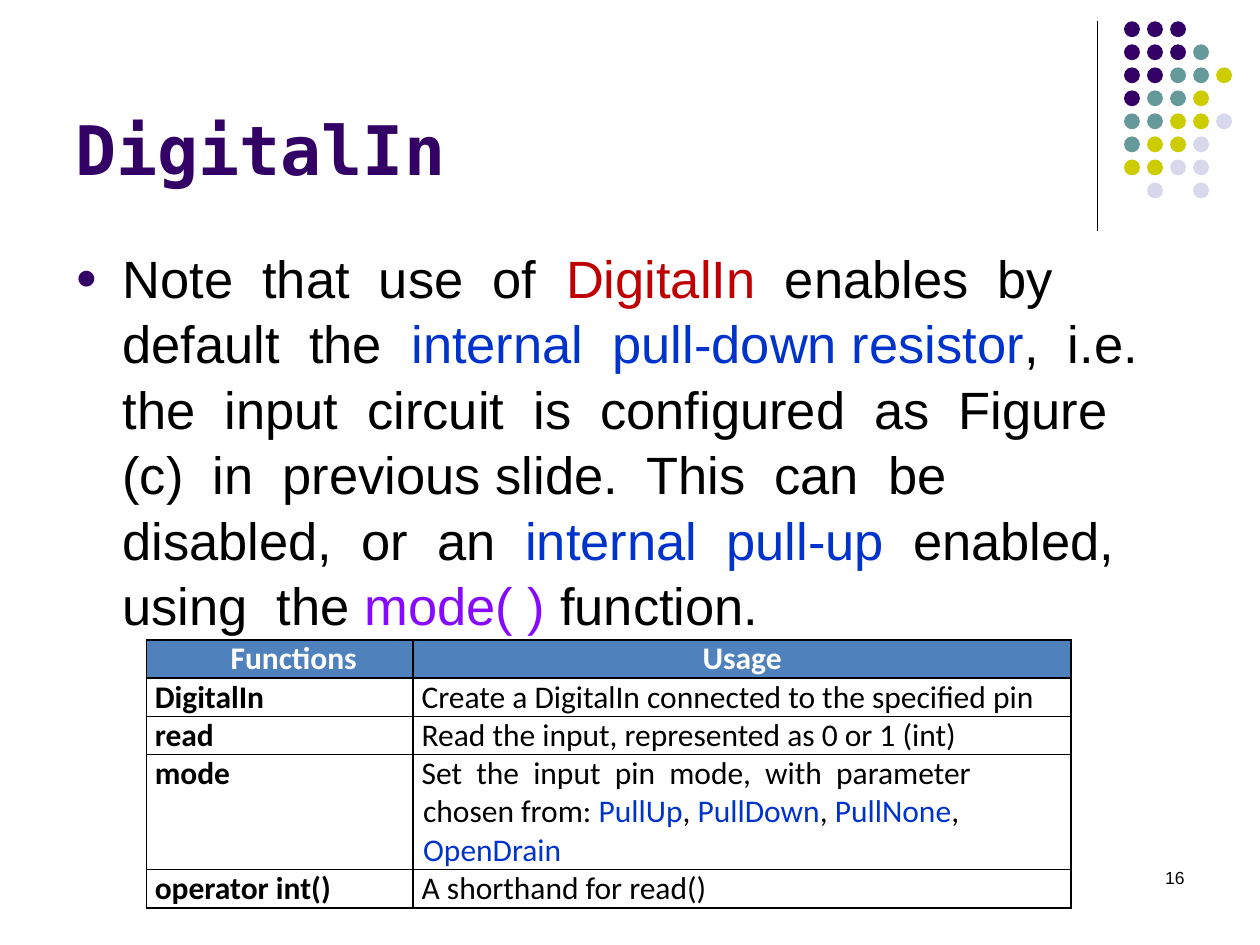
import pptx
import pptx.dml.color
import pptx.enum.shapes
import pptx.enum.text
import pptx.oxml.ns
import pptx.util
from lxml import etree
from pptx.util import Cm

COLORS = {
    "purple": "330066", "teal": "669999", "lime": "CCCC00", "lavender": "D8D8EC",
    "black": "000000", "white": "FFFFFF", "red": "C00000", "blue": "0033CC",
    "violet": "850AFF", "header": "4F81BC",
}
ALIGN = pptx.enum.text.PP_ALIGN
qn = pptx.oxml.ns.qn


def rgb(name):
    return pptx.dml.color.RGBColor.from_string(COLORS[name])


def write_runs(paragraph, pieces, font, size, bold=False, margin=0, indent=0):
    """Fill a paragraph with (text, colour) pieces and set its indents."""
    for text, color in pieces:
        run = paragraph.add_run()
        run.text = text
        run.font.name = font
        run.font.size = pptx.util.Pt(size)
        run.font.bold = bold
        run.font.color.rgb = rgb(color)
    properties = paragraph._p.get_or_add_pPr()
    properties.set("marL", str(Cm(margin)))
    properties.set("indent", str(Cm(indent)))


presentation = pptx.Presentation()
presentation.slide_width = Cm(25.4)
presentation.slide_height = Cm(19.05)
slide = presentation.slides.add_slide(presentation.slide_layouts[6])
shapes = slide.shapes

# Vertical rule beside the dots
rule = shapes.add_connector(
    pptx.enum.shapes.MSO_CONNECTOR.STRAIGHT, Cm(22.12), Cm(0.43), Cm(22.12), Cm(4.65))
rule.line.color.rgb = rgb("black")
rule.line.width = pptx.util.Pt(0.75)
etree.SubElement(rule._element.spPr, qn("a:effectLst"))

# Dot grid: one letter per dot, a space where there is none
dot_rows = ["PPP", "PPPT", "PPTTL", "PTTL", "TTLLV", "TLLV", "LLVV", " V V"]
dot_colors = {"P": "purple", "T": "teal", "L": "lime", "V": "lavender"}
dot_pitch = 3.25 / 7
for row, letters in enumerate(dot_rows):
    for column, letter in enumerate(letters):
        if letter == " ":
            continue
        dot = shapes.add_shape(
            pptx.enum.shapes.MSO_SHAPE.OVAL,
            Cm(22.66 + column * dot_pitch), Cm(0.43 + row * dot_pitch), Cm(0.32), Cm(0.32))
        dot.shadow.inherit = False
        dot.fill.solid()
        dot.fill.fore_color.rgb = rgb(dot_colors[letter])
        dot.line.fill.background()

# Title
title = shapes.add_textbox(Cm(1.27), Cm(0.33), Cm(20.96), Cm(3.61))
title.text_frame.word_wrap = True
title.text_frame.vertical_anchor = pptx.enum.text.MSO_ANCHOR.BOTTOM
write_runs(title.text_frame.paragraphs[0], [("DigitalIn", "purple")],
           "DejaVu Sans Mono", 39, bold=True)

# Body text
body = shapes.add_textbox(Cm(1.27), Cm(4.78), Cm(22.86), Cm(12.24))
body.text_frame.word_wrap = True
paragraph = body.text_frame.paragraphs[0]
write_runs(paragraph, [
    ("Note  that  use  of  ", "black"),
    ("DigitalIn", "red"),
    ("  enables  by  default  the  ", "black"),
    ("internal  pull-down resistor", "blue"),
    (",  i.e.  the  input  circuit  is  configured  as  Figure  (c)  in  previous slide.  "
     "This  can  be  disabled,  or  an  ", "black"),
    ("internal  pull-up", "blue"),
    ("  enabled,  using  the ", "black"),
    ("mode( ) ", "violet"),
    ("function.", "black"),
], "Arial", 30, margin=0.95, indent=-0.95)
paragraph.line_spacing = 1.04
properties = paragraph._p.get_or_add_pPr()
bullet_color = etree.SubElement(properties, qn("a:buClr"))
etree.SubElement(bullet_color, qn("a:srgbClr"), val=COLORS["purple"])
etree.SubElement(properties, qn("a:buSzPct"), val="70000")
etree.SubElement(properties, qn("a:buFont"), typeface="Arial")
etree.SubElement(properties, qn("a:buChar"), char="●")

# Slide number
number = shapes.add_textbox(Cm(18.2), Cm(17.35), Cm(5.93), Cm(1.27))
number.text_frame.word_wrap = True
paragraph = number.text_frame.paragraphs[0]
paragraph.alignment = ALIGN.RIGHT
write_runs(paragraph, [("16", "black")], "Arial", 10)

# Function table: name, then the pieces of its usage
functions = [
    ("Functions", [("Usage", "white")]),
    ("DigitalIn", [("Create a DigitalIn connected to the specified pin", "black")]),
    ("read", [("Read the input, represented as 0 or 1 (int)", "black")]),
    ("mode", [
        ("Set  the  input  pin  mode,  with  parameter  chosen from: ", "black"),
        ("PullUp", "blue"), (", ", "black"),
        ("PullDown", "blue"), (", ", "black"),
        ("PullNone", "blue"), (", ", "black"),
        ("OpenDrain", "blue"),
    ]),
    ("operator int()", [("A shorthand for read()", "black")]),
]
row_heights = [0.77, 0.77, 0.77, 2.32, 0.77]
table = shapes.add_table(
    len(functions), 2, Cm(2.95), Cm(12.9), Cm(18.64), Cm(sum(row_heights))).table
table.first_row = False
table.horz_banding = False
for column, width in zip(table.columns, [5.38, 13.26]):
    column.width = Cm(width)

for row, (name, usage) in enumerate(functions):
    table.rows[row].height = Cm(row_heights[row])
    is_header = row == 0
    name_color = "white" if is_header else "black"
    for column, pieces in enumerate([[(name, name_color)], usage]):
        cell = table.cell(row, column)
        cell.margin_left = cell.margin_right = cell.margin_top = cell.margin_bottom = 0
        margin, indent = 0.2, -0.03
        paragraph = cell.text_frame.paragraphs[0]
        if is_header and column == 0:
            margin = 1.73
        elif is_header:
            margin, indent = 0, 0
            paragraph.alignment = ALIGN.CENTER
        write_runs(paragraph, pieces, "Calibri", 18,
                   bold=is_header or column == 0, margin=margin, indent=indent)

        # Cell borders come before the fill
        cell_properties = cell._tc.get_or_add_tcPr()
        for side in ("lnL", "lnR", "lnT", "lnB"):
            border = etree.SubElement(
                cell_properties, qn("a:" + side), w=str(pptx.util.Pt(1)))
            border_fill = etree.SubElement(border, qn("a:solidFill"))
            etree.SubElement(border_fill, qn("a:srgbClr"), val=COLORS["black"])
        if is_header:
            cell.fill.solid()
            cell.fill.fore_color.rgb = rgb("header")
        else:
            cell.fill.background()

presentation.save("out.pptx")
